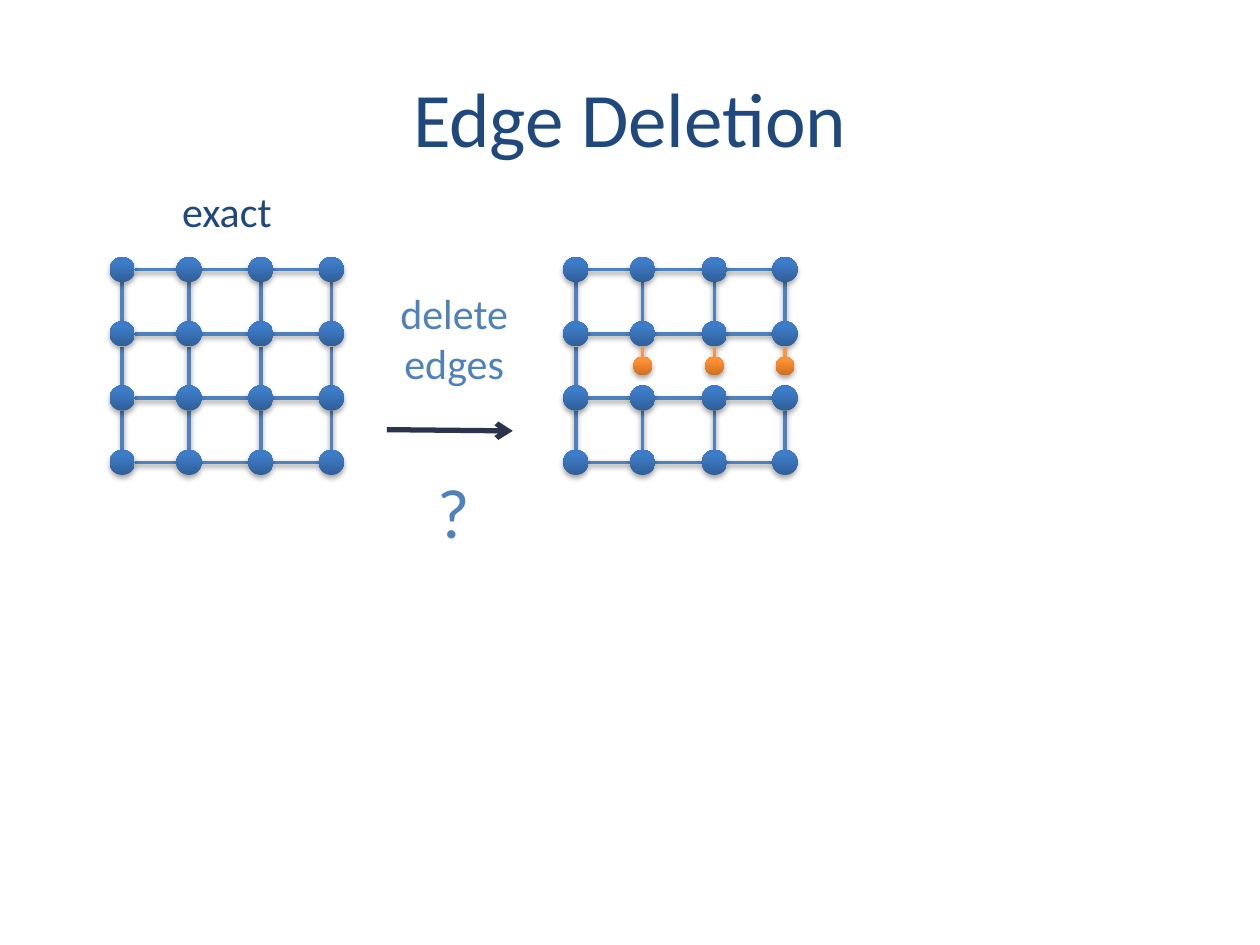
from pptx import Presentation
from pptx.dml.color import RGBColor
from pptx.enum.shapes import MSO_CONNECTOR, MSO_SHAPE
from pptx.enum.text import MSO_ANCHOR, PP_ALIGN
from pptx.oxml import parse_xml
from pptx.oxml.ns import nsdecls, qn
from pptx.util import Inches, Pt

NAVY, BLUE, ORANGE, ARROW = "1F497D", "4F81BD", "F79646", "2A354C"
BLUE_NODE = [(0, "2F5F99"), (80, "3D7CC7"), (100, "3A7CCB")]
ORANGE_NODE = [(0, "CC6E20"), (80, "FF9034"), (100, "FF9136")]

# lines of text, (left, top, width, height), size, colour
TITLE = (["Edge Deletion"], (0.5, 0.3, 9, 1.25), 44, NAVY)
EXACT = (["exact"], (1.34, 1.42, 0.92, 0.5), 24, NAVY)
DELETE = (["delete", "edges"], (3.07, 2.23, 1.07, 0.91), 24, BLUE)
QUESTION = (["?"], (3.37, 3.67, 0.46, 0.77), 40, BLUE)

COLUMNS = [0, 0.53, 1.1, 1.66]  # node centres, from the grid's left column
ROWS = [2.14 + 0.51 * i for i in range(4)]
GRIDS = [  # left column, (row, column) of the node above each deleted edge
    (0.97, []),
    (4.57, [(1, 1), (1, 2), (1, 3)]),
]
RADIUS, SMALL_RADIUS = 0.1, 0.075


def rgb(color):
    return RGBColor.from_string(color)


def set_shadow(s, alpha=0, distance=0):
    """Give the shape a soft shadow below it, or none when alpha is 0."""
    shadow = (
        f'<a:outerShdw blurRad="{Pt(3.1)}" dist="{Pt(distance)}" dir="5400000" rotWithShape="0">'
        f'<a:srgbClr val="000000"><a:alpha val="{alpha * 1000}"/></a:srgbClr></a:outerShdw>'
    ) if alpha else ""
    effects = parse_xml(f'<a:effectLst {nsdecls("a")}>{shadow}</a:effectLst>')
    s._element.spPr.append(effects)


def add_text(shapes, lines, box, size, color, wrap=False):
    tf = shapes.add_textbox(*map(Inches, box)).text_frame
    tf.word_wrap = wrap
    tf.vertical_anchor = MSO_ANCHOR.MIDDLE if wrap else MSO_ANCHOR.TOP
    p = tf.paragraphs[0]
    p.alignment = PP_ALIGN.CENTER
    for i, line in enumerate(lines):
        if i:
            p.add_line_break()
        r = p.add_run()
        r.text = line
        r.font.name, r.font.size = "Calibri", Pt(size)
        r.font.color.rgb = rgb(color)


def add_line(shapes, start, end, color, width):
    c = shapes.add_connector(MSO_CONNECTOR.STRAIGHT, *map(Inches, start + end))
    c.line.color.rgb = rgb(color)
    c.line.width = Pt(width)
    return c


def add_edge(shapes, start, end, color=BLUE):
    set_shadow(add_line(shapes, start, end, color, 2), 38, 1.6)


def add_node(shapes, x, y, radius, stops):
    s = shapes.add_shape(MSO_SHAPE.OVAL, Inches(x - radius), Inches(y - radius),
                         Inches(2 * radius), Inches(2 * radius))
    s.line.fill.background()
    colors = "".join(f'<a:gs pos="{pos * 1000}"><a:srgbClr val="{color}"/></a:gs>'
                     for pos, color in stops)
    s._element.spPr.find(qn("a:prstGeom")).addnext(parse_xml(
        f'<a:gradFill {nsdecls("a")} rotWithShape="1"><a:gsLst>{colors}</a:gsLst>'
        '<a:lin ang="16200000" scaled="0"/></a:gradFill>'))
    set_shadow(s, 35, 1.8)


def add_grid(shapes, left, deleted):
    xs = [left + dx for dx in COLUMNS]
    for y in ROWS:
        for x1, x2 in zip(xs, xs[1:]):
            add_edge(shapes, (x1 + RADIUS, y), (x2 - RADIUS, y))
    for row, (y1, y2) in enumerate(zip(ROWS, ROWS[1:])):
        for column, x in enumerate(xs):
            if (row, column) not in deleted:
                add_edge(shapes, (x, y1 + RADIUS), (x, y2 - RADIUS))
    for y in ROWS:
        for x in xs:
            add_node(shapes, x, y, RADIUS, BLUE_NODE)
    for row, column in deleted:
        x, y = xs[column], (ROWS[row] + ROWS[row + 1]) / 2
        add_edge(shapes, (x, ROWS[row] + RADIUS), (x, y - SMALL_RADIUS), ORANGE)
        add_node(shapes, x, y, SMALL_RADIUS, ORANGE_NODE)


def main():
    prs = Presentation()
    prs.slide_width, prs.slide_height = Inches(10), Inches(7.5)
    shapes = prs.slides.add_slide(prs.slide_layouts[6]).shapes

    add_text(shapes, *TITLE, wrap=True)
    add_text(shapes, *EXACT)
    for left, deleted in GRIDS:
        add_grid(shapes.add_group_shape().shapes, left, deleted)

    step = shapes.add_group_shape().shapes
    arrow = add_line(step, (3.07, 3.41), (4.07, 3.42), ARROW, 3)
    arrow.line._get_or_add_ln().append(
        parse_xml(f'<a:tailEnd {nsdecls("a")} type="arrow"/>'))
    set_shadow(arrow)
    add_text(step, *DELETE)
    add_text(shapes, *QUESTION)

    prs.save("out.pptx")


if __name__ == "__main__":
    main()
